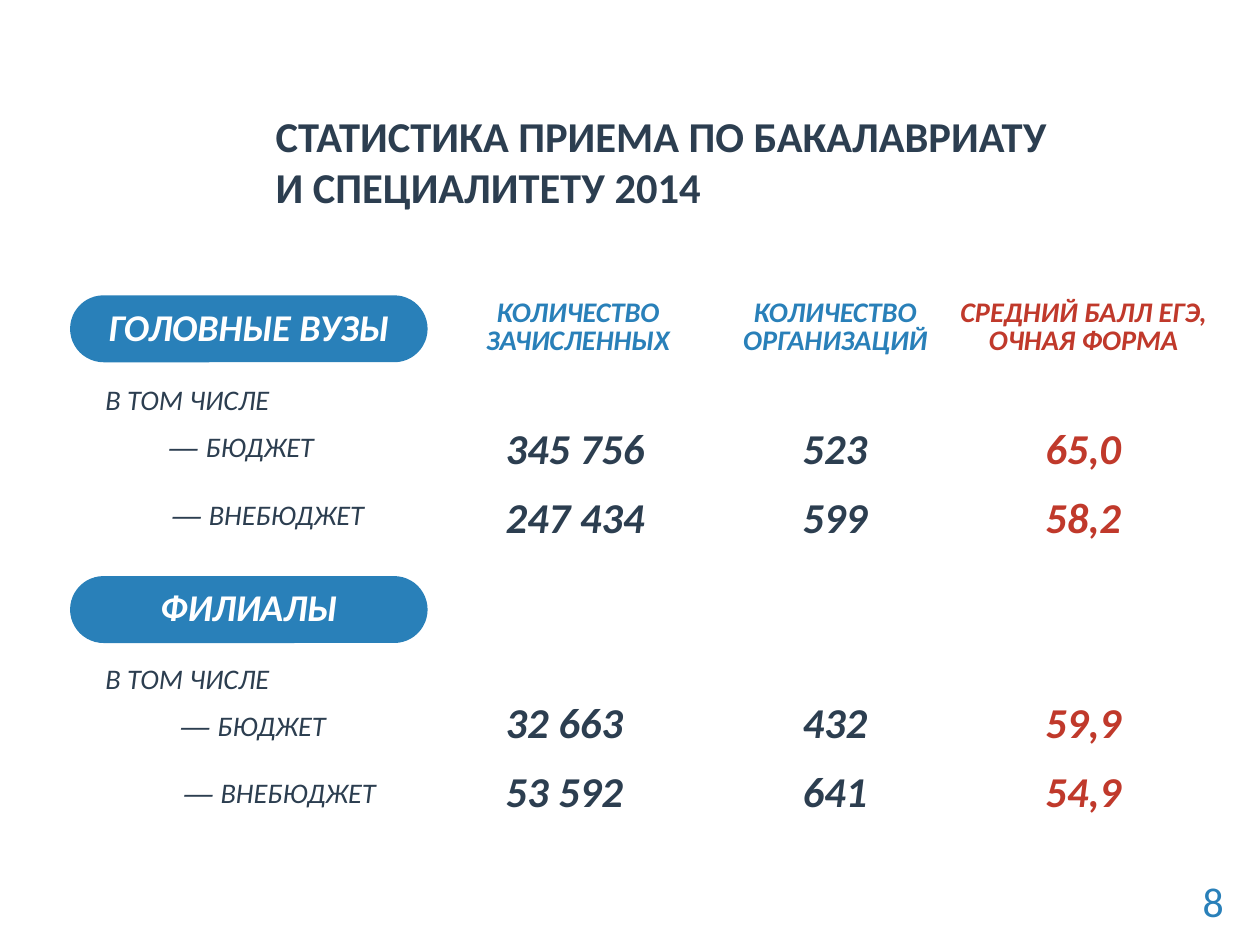
from pptx import Presentation
from pptx.dml.color import RGBColor
from pptx.enum import shapes, text
from pptx.util import Pt

DARK, BLUE, RED, WHITE = "2C3E50", "2980B9", "C0392B", "FFFFFF"
LEFT, CENTER = text.PP_ALIGN.LEFT, text.PP_ALIGN.CENTER
BODY = {"name": "Calibri", "size": Pt(36), "bold": False, "italic": True}
HEADER = {**BODY, "bold": True}
VALUE = {**HEADER, "size": Pt(54)}
PILL = {**HEADER, "size": Pt(48)}
TITLE = {**VALUE, "italic": False}
PAGE = {**BODY, "size": Pt(53), "italic": False}
COLUMNS = [
    ("КОЛИЧЕСТВО ЗАЧИСЛЕННЫХ", 585, 298, BLUE),
    ("КОЛИЧЕСТВО ОРГАНИЗАЦИЙ", 911.5, 298, BLUE),
    ("СРЕДНИЙ БАЛЛ ЕГЭ, ОЧНАЯ ФОРМА", 1206, 340, RED),
]
SECTIONS = [
    {
        "name": "ГОЛОВНЫЕ ВУЗЫ", "box": (89, 375, 454, 85), "intro": 114.5,
        "rows": [
            ("БЮДЖЕТ", 119, 174.5, 157, ("345 756", "523", "65,0")),
            ("ВНЕБЮДЖЕТ", 123, 261.5, 245, ("247 434", "599", "58,2")),
        ],
        "widths": (193, 97, 112),
    },
    {
        "name": "ФИЛИАЛЫ", "box": (89, 731.5, 454, 85), "intro": 113,
        "rows": [
            ("БЮДЖЕТ", 134, 173, 149, ("32 663", "432", "59,9")),
            ("ВНЕБЮДЖЕТ", 138, 258, 236, ("53 592", "641", "54,9")),
        ],
        "widths": (165, 97, 112),
    },
]
VALUE_LEFTS = (635, 1012, 1320.5)
VALUE_COLORS = (DARK, DARK, RED)


def rgb(value):
    """Return a colour from a hex string."""
    return RGBColor.from_string(value)


def add_run(p, content, fmt, color):
    """Append a formatted run to a paragraph."""
    r = p.add_run()
    r.text = content
    for key, value in fmt.items():
        setattr(r.font, key, value)
    r.font.color.rgb = rgb(color)


def add_text(slide, box, content, fmt, color, align=LEFT, spacing=1.0, wrap=True, dash=False):
    """Add a one-paragraph text box, led by a dash when asked."""
    tf = slide.shapes.add_textbox(*map(Pt, box)).text_frame
    tf.word_wrap = wrap
    tf.auto_size = text.MSO_AUTO_SIZE.SHAPE_TO_FIT_TEXT
    p = tf.paragraphs[0]
    p.alignment, p.line_spacing = align, spacing
    if dash:
        add_run(p, "― ", {**fmt, "name": "Arial"}, color)
    add_run(p, content, fmt, color)


def add_title(slide, box, lines):
    """Place and format the title placeholder."""
    sp = slide.shapes.title
    sp.left, sp.top, sp.width, sp.height = map(Pt, box)
    tf = sp.text_frame
    frame = {
        "margin_left": Pt(16), "margin_right": Pt(16),
        "margin_top": Pt(8), "margin_bottom": Pt(8),
        "vertical_anchor": text.MSO_ANCHOR.MIDDLE,
        "auto_size": text.MSO_AUTO_SIZE.NONE, "word_wrap": True,
    }
    for key, value in frame.items():
        setattr(tf, key, value)
    p = tf.paragraphs[0]
    p.alignment = LEFT
    for i, line in enumerate(lines):
        if i:
            p.add_line_break()
        add_run(p, line, TITLE, DARK)


def add_headers(slide, top, height):
    """Add the column headings."""
    for label, left, width, color in COLUMNS:
        add_text(slide, (left, top, width, height), label, HEADER, color, CENTER, 0.8)


def add_pill(slide, box, label):
    """Add a rounded section heading."""
    sp = slide.shapes.add_shape(shapes.MSO_SHAPE.ROUNDED_RECTANGLE, *map(Pt, box))
    sp.adjustments[0] = 0.5
    sp.shadow.inherit = False
    sp.fill.solid()
    sp.fill.fore_color.rgb = rgb(BLUE)
    sp.line.fill.background()
    tf = sp.text_frame
    tf.vertical_anchor = text.MSO_ANCHOR.MIDDLE
    p = tf.paragraphs[0]
    p.alignment, p.line_spacing = CENTER, 0.9
    add_run(p, label, PILL, WHITE)


def add_section(slide, section):
    """Add a section heading with its labels and figures."""
    left, top = section["box"][:2]
    add_pill(slide, section["box"], section["name"])
    add_text(slide, (left, top + section["intro"], 298, 43), "В ТОМ ЧИСЛЕ", BODY, DARK, CENTER, 0.8)
    for label, indent, label_dy, value_dy, values in section["rows"]:
        add_text(slide, (left + indent, top + label_dy, 298, 43), label, BODY, DARK,
                 spacing=0.8, dash=True)
        for value, x, width, color in zip(values, VALUE_LEFTS, section["widths"], VALUE_COLORS):
            add_text(slide, (x, top + value_dy, width, 73), value, VALUE, color, wrap=False)


def main():
    """Build and save the slide."""
    prs = Presentation()
    prs.slide_width, prs.slide_height = Pt(1600), Pt(1200)
    slide = prs.slides.add_slide(prs.slide_layouts[5])
    add_title(slide, (334, 100, 1186, 209),
              ("СТАТИСТИКА ПРИЕМА ПО БАКАЛАВРИАТУ", "И СПЕЦИАЛИТЕТУ 2014"))
    add_headers(slide, 379, 77)
    for section in SECTIONS:
        add_section(slide, section)
    add_text(slide, (1520, 1109, 42, 71), "8", PAGE, BLUE, wrap=False)
    prs.save("out.pptx")


if __name__ == "__main__":
    main()
